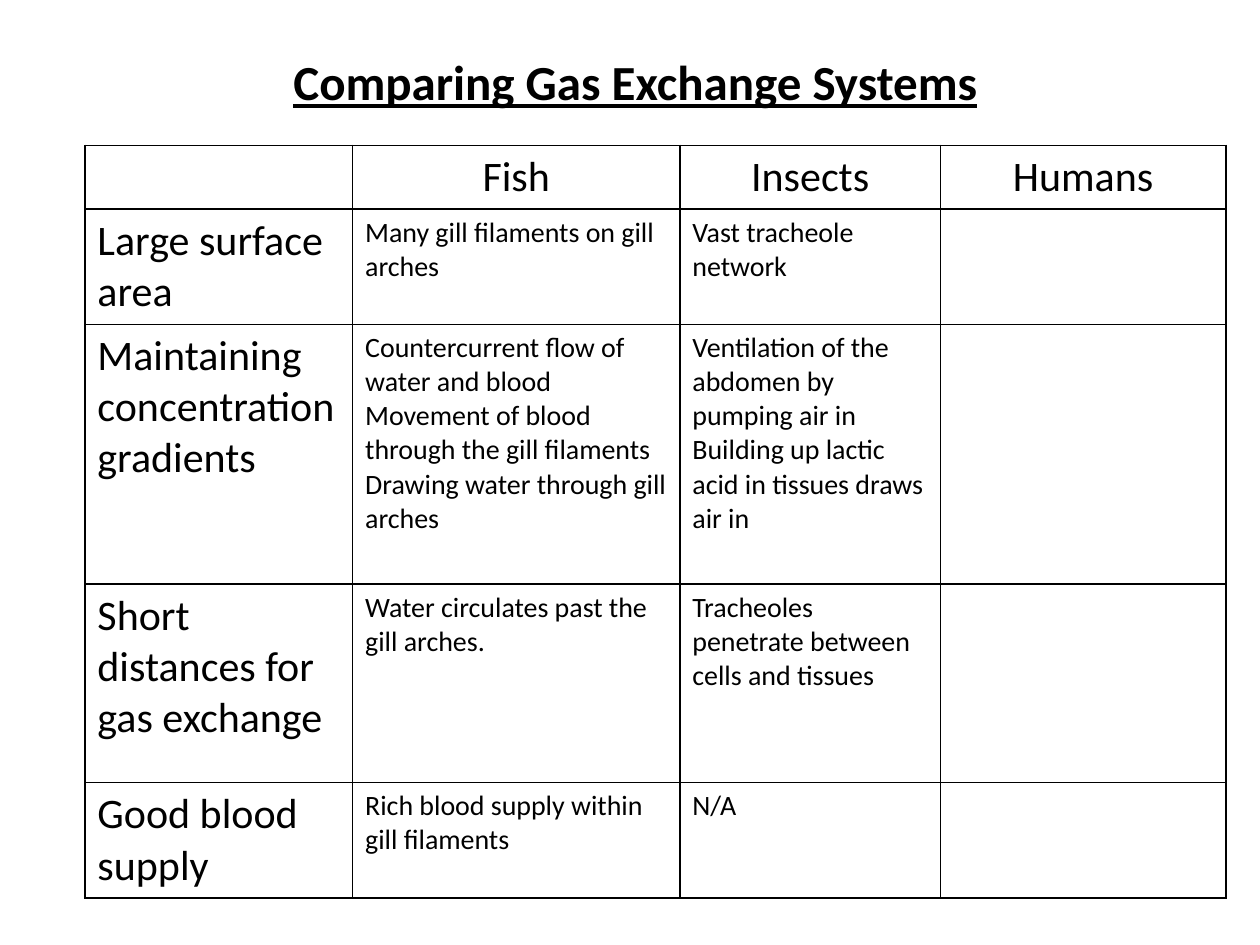
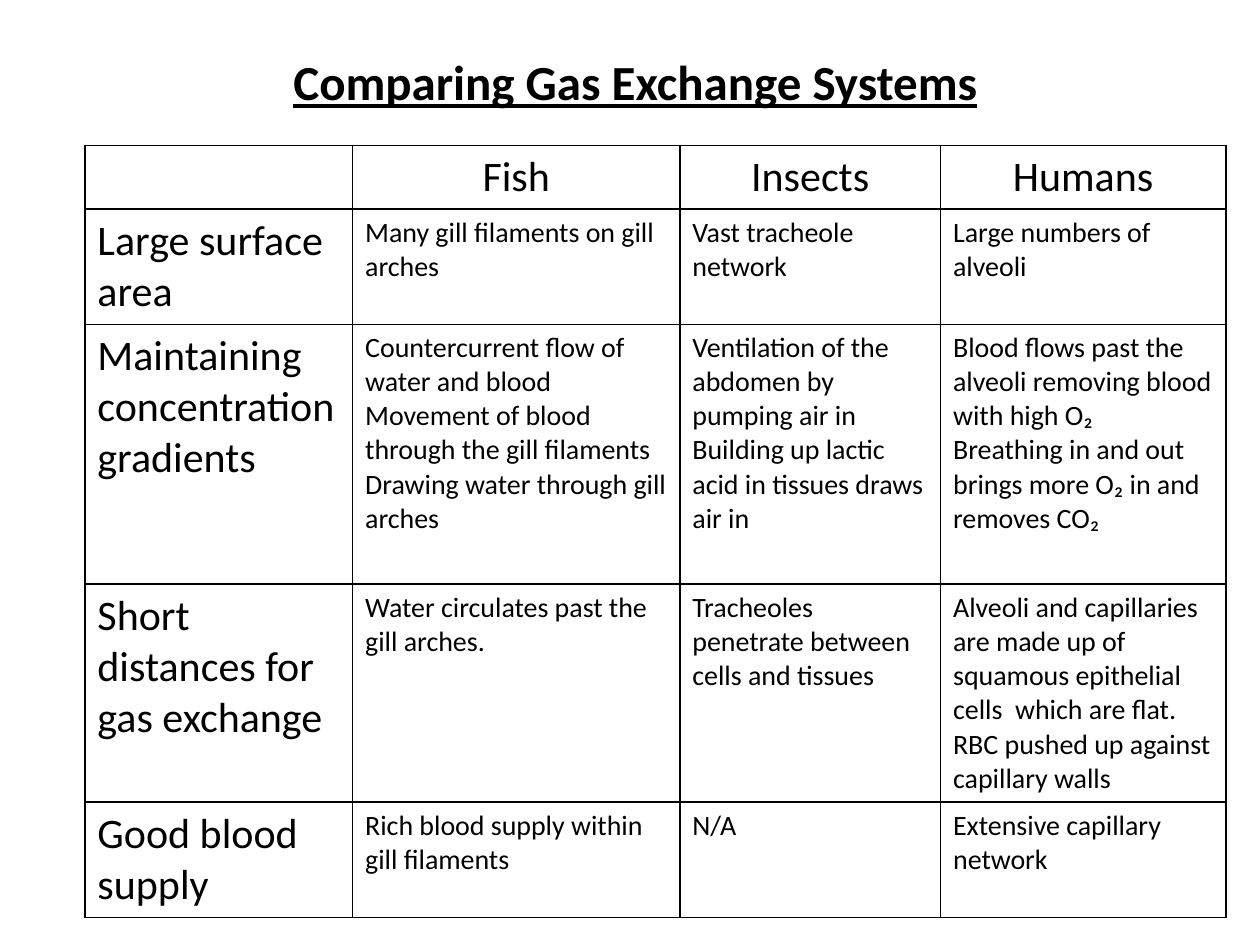
from lxml.etree import SubElement
from pptx import Presentation
from pptx.dml.color import RGBColor
from pptx.enum.text import MSO_ANCHOR, PP_ALIGN
from pptx.oxml.ns import qn
from pptx.util import Pt

TITLE = "Comparing Gas Exchange Systems"
SYSTEMS = ["Fish", "Insects", "Humans"]
# Each feature is followed by the paragraphs for every system.
FEATURES = [
    ("Large surface area",
     ["Many gill filaments on gill arches"],
     ["Vast tracheole network"],
     ["Large numbers of alveoli"]),
    ("Maintaining concentration gradients",
     ["Countercurrent flow of water and blood",
      "Movement of blood through the gill filaments",
      "Drawing water through gill arches"],
     ["Ventilation of the abdomen by pumping air in",
      "Building up lactic acid in tissues draws air in"],
     ["Blood flows past the alveoli removing blood with high O₂",
      "Breathing in and out brings more O₂ in and removes CO₂"]),
    ("Short distances for gas exchange",
     ["Water circulates past the gill arches."],
     ["Tracheoles penetrate between cells and tissues"],
     ["Alveoli and capillaries are made up of squamous epithelial cells  which are flat.",
      "RBC pushed up against capillary walls"]),
    ("Good blood supply",
     ["Rich blood supply within gill filaments"],
     ["N/A"],
     ["Extensive capillary network"]),
]
HUMANS_SHOWN = [False, True]  # one slide each: question, then answer

FONT = "Calibri"
COLORS = {"text": "000000", "border": "000000", "cell": "FFFFFF"}
TITLE_SIZE, HEADING_SIZE, BODY_SIZE = 28, 24, 16
TITLE_BOX = (145, 26, 436, 41)
TABLE_LEFT, TABLE_TOP = 48.5, 83
COL_WIDTHS = [153, 187, 149, 163]
ROW_HEIGHTS = [36.5, 65.5, 148.5, 113.5, 65.5]


def write(tf, paragraphs, size, align=PP_ALIGN.LEFT, strong=False):
    """Fill a text frame; strong means bold and underlined."""
    for i, text in enumerate(paragraphs):
        p = tf.add_paragraph() if i else tf.paragraphs[0]
        p.alignment = align
        r = p.add_run()
        r.text = text
        r.font.name, r.font.size = FONT, Pt(size)
        r.font.bold = r.font.underline = strong
        r.font.color.rgb = RGBColor.from_string(COLORS["text"])


def style_cell(cell):
    tc_pr = cell._tc.get_or_add_tcPr()
    for side in ("lnL", "lnR", "lnT", "lnB"):
        ln = SubElement(tc_pr, qn(f"a:{side}"), w=str(Pt(1)))
        fill = SubElement(ln, qn("a:solidFill"))
        SubElement(fill, qn("a:srgbClr"), val=COLORS["border"])
    cell.fill.solid()
    cell.fill.fore_color.rgb = RGBColor.from_string(COLORS["cell"])


def add_title(slide):
    title = slide.shapes.title
    title.left, title.top, title.width, title.height = map(Pt, TITLE_BOX)
    tf = title.text_frame
    tf.vertical_anchor = MSO_ANCHOR.MIDDLE
    write(tf, [TITLE], TITLE_SIZE, PP_ALIGN.CENTER, strong=True)


def add_comparison(slide, humans_shown):
    table = slide.shapes.add_table(
        len(ROW_HEIGHTS), len(COL_WIDTHS), Pt(TABLE_LEFT), Pt(TABLE_TOP),
        Pt(sum(COL_WIDTHS)), Pt(sum(ROW_HEIGHTS))).table
    table.first_row = table.horz_banding = False
    for column, width in zip(table.columns, COL_WIDTHS):
        column.width = Pt(width)
    for row, height in zip(table.rows, ROW_HEIGHTS):
        row.height = Pt(height)
    for cell in table.iter_cells():
        style_cell(cell)

    for c, system in enumerate(SYSTEMS, 1):
        write(table.cell(0, c).text_frame, [system], HEADING_SIZE, PP_ALIGN.CENTER)
    for r, (feature, *answers) in enumerate(FEATURES, 1):
        write(table.cell(r, 0).text_frame, [feature], HEADING_SIZE)
        for c, (system, answer) in enumerate(zip(SYSTEMS, answers), 1):
            if humans_shown or system != "Humans":
                write(table.cell(r, c).text_frame, answer, BODY_SIZE)


def main():
    prs = Presentation()
    prs.slide_width, prs.slide_height = Pt(720), Pt(540)
    title_only = prs.slide_layouts[5]
    for humans_shown in HUMANS_SHOWN:
        slide = prs.slides.add_slide(title_only)
        add_comparison(slide, humans_shown)
        add_title(slide)
    prs.save("out.pptx")


if __name__ == "__main__":
    main()
